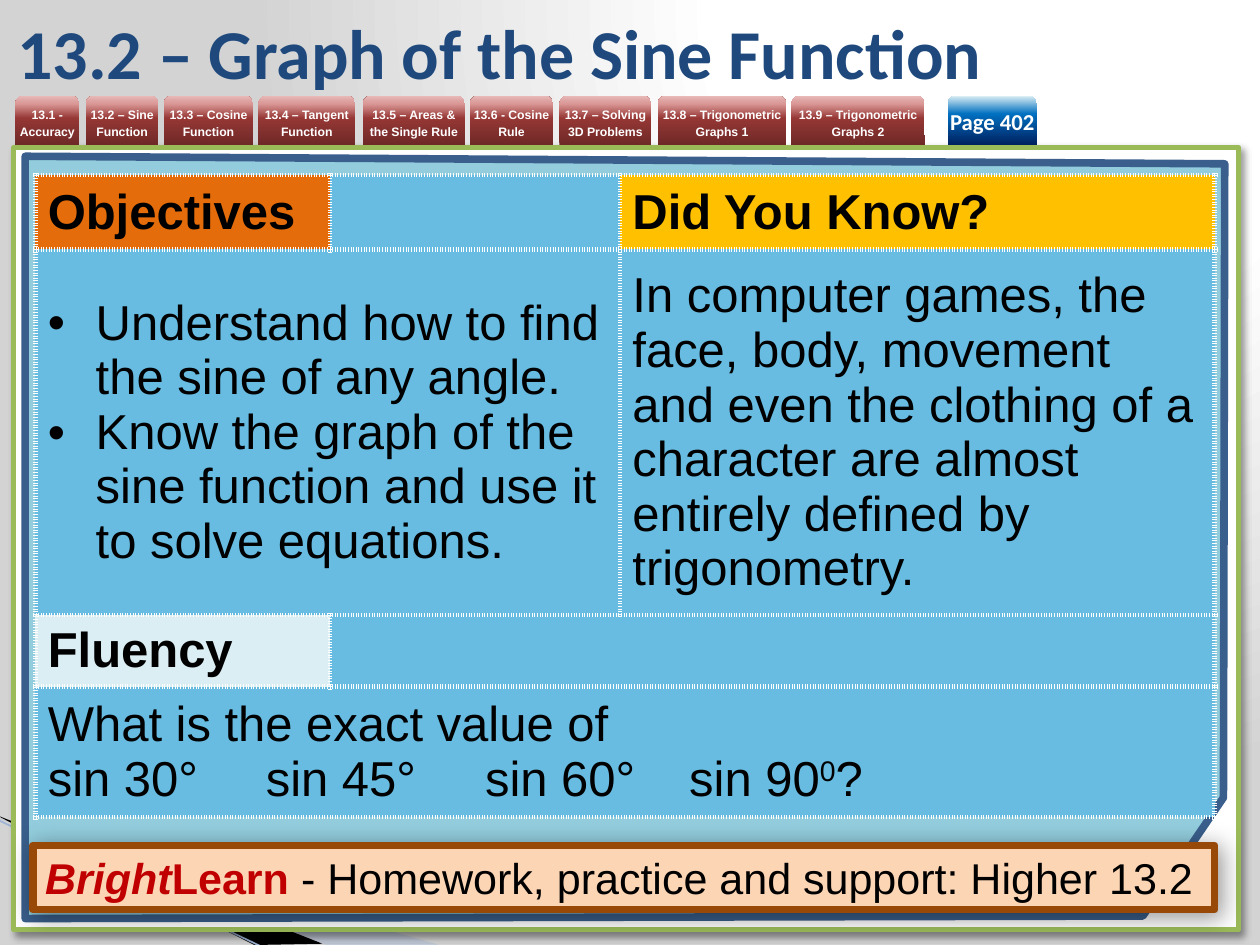
from dataclasses import dataclass

from lxml import etree
from pptx import Presentation
from pptx import util as u
from pptx.dml.color import RGBColor
from pptx.enum import shapes, text
from pptx.oxml import parse_xml
from pptx.oxml.ns import nsdecls, qn

Inches, Pt = u.Inches, u.Pt


@dataclass(frozen=True)
class Theme:
    sans: str = "Arial"
    head: str = "Calibri"
    white: str = "FFFFFF"
    black: str = "000000"
    navy: str = "1F497D"
    green: str = "9BBB59"
    haze: str = "A7B9DB"
    mist: str = "9EB3D6"
    aqua: str = "93CDDD"
    steel: str = "3A5F8C"
    sky: str = "68BCE1"
    flame: str = "E46C0A"
    gold: str = "FFC000"
    ice: str = "DBEEF4"
    peach: str = "FCD5B5"
    brown: str = "984807"
    crimson: str = "C00000"
    back: tuple = ((0, "FFFFFF"), (40, "FFFFFF"), (100, "D3D3D3"))
    red: tuple = ((0, "6F2927"), (54, "953735"), (83, "D99694"), (100, "E6B9B8"))
    blue: tuple = ((0, "002060"), (63, "0070C0"), (100, "DBEEF4"))
    title: float = 40
    body: float = 28
    foot: float = 24.6
    page: float = 13
    tab: float = 7


def blend(stops, shade):
    """Gradient fill element from (percent, colour) stops."""
    marks = "".join(f'<a:gs pos="{at * 1000}"><a:srgbClr val="{tone}"/></a:gs>'
                    for at, tone in stops)
    return parse_xml(f'<a:gradFill {nsdecls("a")} rotWithShape="1">'
                     f'<a:gsLst>{marks}</a:gsLst>{shade}</a:gradFill>')


class Deck:
    def __init__(self, theme):
        self.theme = theme
        self.file = Presentation()
        self.file.slide_width, self.file.slide_height = Inches(10), Inches(7.5)
        self.slide = self.file.slides.add_slide(self.file.slide_layouts[6])

    def ground(self, stops):
        fill = self.slide.background.fill
        fill.solid()
        old = self.slide.background._cSld.bg.bgPr.find(qn("a:solidFill"))
        shade = '<a:path path="circle"><a:fillToRect l="65000" b="98000"/></a:path>'
        old.getparent().replace(old, blend(stops, shade))

    def paint(self, shape, fill, line=None, width=1, alpha=None):
        shape.shadow.inherit = False
        shape.fill.solid()
        shape.fill.fore_color.rgb = RGBColor.from_string(fill)
        if alpha:
            tone = shape._element.spPr.find(qn("a:solidFill"))[0]
            etree.SubElement(tone, qn("a:alpha")).set("val", str(alpha * 1000))
        if line:
            shape.line.color.rgb = RGBColor.from_string(line)
            shape.line.width = Pt(width)
        else:
            shape.line.fill.background()

    def cast(self, shape, blur):
        shade = parse_xml(
            f'<a:outerShdw {nsdecls("a")} blurRad="{Pt(blur)}" dist="{Pt(3)}" '
            'dir="2700000" algn="tl" rotWithShape="0"><a:srgbClr '
            f'val="{self.theme.black}"><a:alpha val="40000"/></a:srgbClr></a:outerShdw>')
        shape._element.spPr.find(qn("a:effectLst")).append(shade)

    def shape(self, kind, box):
        return self.slide.shapes.add_shape(kind, *map(Inches, box))

    def panel(self, box, fill, line, width, blur):
        panel = self.shape(shapes.MSO_SHAPE.RECTANGLE, box)
        self.paint(panel, fill, line, width)
        self.cast(panel, blur)
        return panel

    def outline(self, points, fill, **style):
        (x, y), *rest = [tuple(map(Inches, point)) for point in points]
        maker = self.slide.shapes.build_freeform(x, y)
        maker.add_line_segments(rest, close=True)
        self.paint(maker.convert_to_shape(), fill, **style)

    def line(self, start, end, tone, width):
        line = self.slide.shapes.add_connector(
            shapes.MSO_CONNECTOR.STRAIGHT, *map(Inches, start + end))
        line.line.color.rgb = RGBColor.from_string(tone)
        line.line.width = Pt(width)
        etree.SubElement(line._element.spPr, qn("a:effectLst"))

    def run(self, para, words, size, tone, bold=False, slant=False, font=None):
        run = para.add_run()
        run.text = words
        run.font.size, run.font.bold, run.font.italic = Pt(size), bold, slant
        run.font.name = font or self.theme.sans
        run.font.color.rgb = RGBColor.from_string(tone)
        return run

    def frame(self, shape, align=text.PP_ALIGN.LEFT, inset=None):
        frame = shape.text_frame
        frame.word_wrap = True
        frame.vertical_anchor = text.MSO_ANCHOR.MIDDLE
        if inset is not None:
            frame.margin_left = frame.margin_right = Inches(inset)
            frame.margin_top = frame.margin_bottom = Inches(inset)
        frame.paragraphs[0].alignment = align
        return frame.paragraphs[0]

    def title(self, box, words):
        para = self.frame(self.slide.shapes.add_textbox(*map(Inches, box)))
        self.run(para, words, self.theme.title, self.theme.navy, True,
                 font=self.theme.head)

    def tab(self, left, width, words, stops, size, font, space=None):
        tab = self.shape(shapes.MSO_SHAPE.ROUND_2_SAME_RECTANGLE,
                         (left, 0.76, width, 0.39))
        self.paint(tab, self.theme.white)
        props = tab._element.spPr
        props.replace(props.find(qn("a:solidFill")),
                      blend(stops, '<a:lin ang="16200000" scaled="0"/>'))
        para = self.frame(tab, text.PP_ALIGN.CENTER, 0)
        if space:
            para.line_spacing = Pt(space)
        self.run(para, words, size, self.theme.white, True, font=font)

    def table(self, box, cols, rows):
        grid = self.slide.shapes.add_table(
            len(rows), len(cols), *map(Inches, box)).table
        for col, width in zip(grid.columns, cols):
            col.width = Inches(width)
        for row, height in zip(grid.rows, rows):
            row.height = Inches(height)
        for cell in grid.iter_cells():
            cell.fill.solid()
            cell.fill.fore_color.rgb = RGBColor.from_string(self.theme.sky)
            cell.vertical_anchor = text.MSO_ANCHOR.MIDDLE
            for spot, side in enumerate(("lnL", "lnR", "lnT", "lnB")):
                cell._tc.get_or_add_tcPr().insert(spot, parse_xml(
                    f'<a:{side} {nsdecls("a")} w="{Pt(3)}"><a:solidFill><a:srgbClr '
                    f'val="{self.theme.white}"/></a:solidFill>'
                    f'<a:prstDash val="sysDot"/></a:{side}>'))
        return grid

    def cell(self, cell, *lines, fill=None, bold=False, dots=False, stops=()):
        """Fill a cell with lines; each line is a list of (words, raise)."""
        if fill:
            cell.fill.fore_color.rgb = RGBColor.from_string(fill)
        for spot, line in enumerate(lines):
            frame = cell.text_frame
            para = frame.add_paragraph() if spot else frame.paragraphs[0]
            props = para._p.get_or_add_pPr()
            if dots:
                props.set("marL", str(Inches(0.38)))
                props.set("indent", str(-Inches(0.38)))
                etree.SubElement(props, qn("a:buFont")).set("typeface", self.theme.sans)
                etree.SubElement(props, qn("a:buChar")).set("char", "•")
            if stops:
                tabs = etree.SubElement(props, qn("a:tabLst"))
                for stop in stops:
                    etree.SubElement(tabs, qn("a:tab"), pos=str(Inches(stop)), algn="l")
            for words, lift in [(line, 0)] if isinstance(line, str) else line:
                run = self.run(para, words, self.theme.body, self.theme.black, bold)
                if lift:
                    run._r.get_or_add_rPr().set("baseline", str(lift * 1000))


def main():
    theme = Theme()
    deck = Deck(theme)

    # Backdrop: corner streaks and board
    deck.ground(theme.back)
    deck.outline([(-0.01, 6.5), (3.49, 7.5), (2.59, 7.5), (-0.01, 6.49)],
                 theme.haze, alpha=40)
    deck.outline([(0, 6.48), (2.56, 7.49), (2.02, 7.5), (0.01, 6.49)], theme.black)
    deck.line((-0.01, 6.51), (2.09, 7.52), theme.mist, 0.95)
    deck.panel((0.11, 1.17, 9.72, 6.21), theme.white, theme.green, 3, 4)
    deck.outline([(0.2, 1.24), (9.72, 1.3), (9.71, 6.33), (9.07, 7.27), (0.2, 7.29)],
                 theme.aqua, line=theme.steel, width=4.33)

    # Section tabs
    for left, width, words in (
            (0.12, 0.51, "13.1 - Accuracy"),
            (0.68, 0.58, "13.2 – Sine Function"),
            (1.3, 0.71, "13.3 – Cosine Function"),
            (2.05, 0.77, "13.4 – Tangent Function"),
            (2.88, 0.81, "13.5 – Areas & the Single Rule"),
            (3.73, 0.66, "13.6 - Cosine Rule"),
            (4.44, 0.73, "13.7 – Solving 3D Problems"),
            (5.22, 1.02, "13.8 – Trigonometric Graphs 1"),
            (6.28, 1.06, "13.9 – Trigonometric Graphs 2")):
        deck.tab(left, width, words, theme.red, theme.tab, theme.sans, 10)

    # Title and page tab
    deck.title((0.04, 0.05, 8.27, 0.71), "13.2 – Graph of the Sine Function")
    deck.tab(7.52, 0.71, "Page 402", theme.blue, theme.page, theme.head)

    # Lesson table
    grid = deck.table((0.28, 1.39, 9.37, 4.19), (2.34, 2.3, 4.72),
                      (0.59, 2.48, 0.49, 0.63))
    for first, last in (((1, 0), (1, 1)), ((2, 1), (2, 2)), ((3, 0), (3, 2))):
        grid.cell(*first).merge(grid.cell(*last))
    deck.cell(grid.cell(0, 0), "Objectives", fill=theme.flame, bold=True)
    deck.cell(grid.cell(0, 2), "Did You Know?", fill=theme.gold, bold=True)
    deck.cell(grid.cell(1, 0), "Understand how to find the sine of any angle.",
              "Know the graph of the sine function and use it to solve equations.",
              dots=True)
    deck.cell(grid.cell(1, 2), "In computer games, the face, body, movement and even "
              "the clothing of a character are almost entirely defined by trigonometry.")
    deck.cell(grid.cell(2, 0), "Fluency", fill=theme.ice, bold=True)
    deck.cell(grid.cell(3, 0), "What is the exact value of",
              [("sin 30°\tsin 45°\tsin 60°\tsin 90", 0), ("0", 30), ("?", 0)],
              stops=(1.73, 3.47, 5.09))

    # Homework bar
    bar = deck.panel((0.26, 6.71, 9.38, 0.51), theme.peach, theme.brown, 4.33, 13)
    para = deck.frame(bar)
    deck.run(para, "Bright", theme.foot, theme.crimson, True, True)
    deck.run(para, "Learn ", theme.foot, theme.crimson, True)
    deck.run(para, "- Homework, practice and support: Higher 13.2",
             theme.foot, theme.black)

    deck.file.save("out.pptx")


if __name__ == "__main__":
    main()
